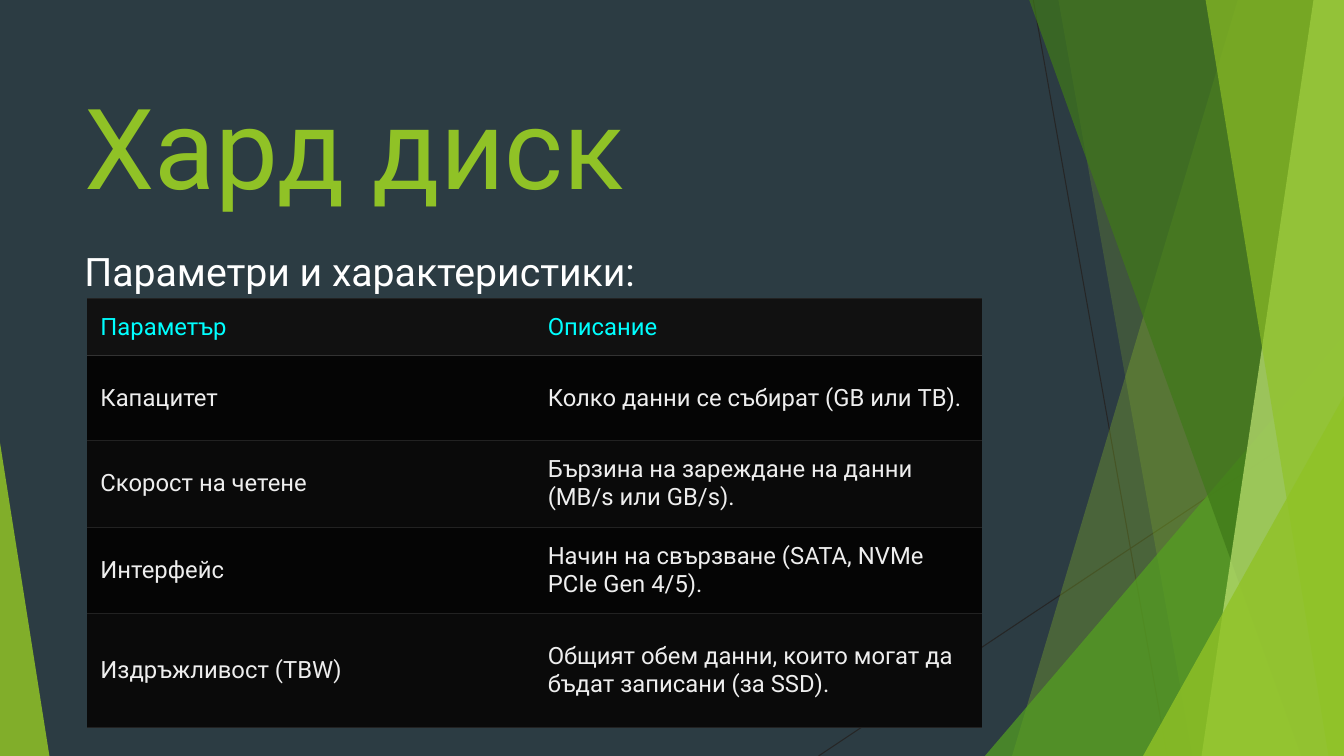
from dataclasses import dataclass

from lxml.etree import SubElement
from pptx import Presentation
from pptx.dml.color import RGBColor
from pptx.enum.shapes import MSO_CONNECTOR, MSO_SHAPE
from pptx.enum.text import MSO_ANCHOR
from pptx.oxml import parse_xml
from pptx.oxml.ns import nsdecls, qn
from pptx.util import Inches, Pt

SLIDE_W, SLIDE_H = Inches(13.33), Inches(7.5)


@dataclass(frozen=True)
class Theme:
    font: str = "Roboto"
    background: str = "2C3C43"
    lime: str = "90C226"
    pale_lime: str = "C0E474"
    green: str = "54A021"
    dark_green: str = "3F7819"
    hairline: str = "262626"
    white: str = "FFFFFF"
    header_text: str = "00FFFF"
    cell_text: str = "EEEEEE"
    header_fill: str = "111111"
    row_fills: tuple = ("050505", "0A0A0A")
    header_rule: str = "333333"
    row_rule: str = "222222"
    title_size: int = 80
    subtitle_size: int = 28
    table_size: int = 17


THEME = Theme()

LINES = [(76.88, 0, 86.85, 100), (100, 53.73, 60.9, 100)]

# Left edge at the top and at the bottom, colour, opacity
BACK_RIBBONS = [
    (92.1, 75.3, THEME.lime, 30),
    (78.75, 88.73, THEME.lime, 20),
]
FRONT_RIBBONS = [
    (76.58, 96.83, THEME.dark_green, 70),
    (97.73, 89.4, THEME.pale_lime, 70),
    (89.7, 98.85, THEME.lime, 65),
]

ROWS = [
    ("Параметър", "Описание"),
    ("Капацитет", "Колко данни се събират (GB или TB)."),
    ("Скорост на четене", "Бързина на зареждане на данни (MB/s или GB/s)."),
    ("Интерфейс", "Начин на свързване (SATA, NVMe PCIe Gen 4/5)."),
    ("Издръжливост (TBW)",
     "Общият обем данни, които могат да бъдат записани (за SSD)."),
]
ROW_HEIGHTS = (7.5, 11.3, 11.4, 11.4, 15.1)


def px(share):
    """Percent of the slide width."""
    return round(SLIDE_W * share / 100)


def py(share):
    """Percent of the slide height."""
    return round(SLIDE_H * share / 100)


def rgb(color):
    return RGBColor.from_string(color)


def paint(sp, color, opacity):
    sp.shadow.inherit = False
    sp.line.fill.background()
    sp.fill.solid()
    sp.fill.fore_color.rgb = rgb(color)
    srgb = sp._element.spPr.find(".//" + qn("a:srgbClr"))
    SubElement(srgb, qn("a:alpha"), val=str(opacity * 1000))


def add_hairline(slide, x1, y1, x2, y2):
    line = slide.shapes.add_connector(
        MSO_CONNECTOR.STRAIGHT, px(x1), py(y1), px(x2), py(y2))
    line.line.color.rgb = rgb(THEME.hairline)
    line.line.width = Pt(0.75)
    SubElement(line._element.spPr, qn("a:effectLst"))


def add_ribbon(slide, top_left, bottom_left, color, opacity):
    """Full-height band from a slanted left edge to the slide's right edge."""
    builder = slide.shapes.build_freeform(px(top_left), 0, scale=1)
    builder.add_line_segments([
        (px(100), 0), (px(100), py(100)), (px(bottom_left), py(100))])
    paint(builder.convert_to_shape(), color, opacity)


def add_corner(slide, left, right, top, apex, color, opacity):
    """Triangle on the bottom edge; apex is 0 for left and 1 for right."""
    sp = slide.shapes.add_shape(
        MSO_SHAPE.ISOSCELES_TRIANGLE,
        px(left), py(top), px(right - left), py(100 - top))
    sp.adjustments[0] = apex
    paint(sp, color, opacity)


def style(p, size, color):
    p.font.name = THEME.font
    p.font.size = Pt(size)
    p.font.bold = False
    p.font.color.rgb = rgb(color)


def add_text(slide, text, top, height, size, color, anchor):
    box = slide.shapes.add_textbox(px(5.55), py(top), px(70.5), py(height))
    tf = box.text_frame
    tf.word_wrap = True
    tf.vertical_anchor = anchor
    tf.margin_top, tf.margin_bottom = Inches(0.09), Inches(0.01)
    p = tf.paragraphs[0]
    p.text = text
    style(p, size, color)


def set_borders(cell, top, bottom):
    """Rules above and below as (colour, points); none at the sides."""
    tcPr = cell._tc.get_or_add_tcPr()
    sides = [("lnL", None), ("lnR", None), ("lnT", top), ("lnB", bottom)]
    for i, (tag, rule) in enumerate(sides):
        if rule:
            color, width = rule
            ink = f'<a:solidFill><a:srgbClr val="{color}"/></a:solidFill>'
        else:
            width, ink = 0, "<a:noFill/>"
        tcPr.insert(i, parse_xml(
            f'<a:{tag} {nsdecls("a")} w="{Pt(width)}">{ink}</a:{tag}>'))


def fill_cell(cell, text, fill, color):
    cell.fill.solid()
    cell.fill.fore_color.rgb = rgb(fill)
    cell.vertical_anchor = MSO_ANCHOR.MIDDLE
    cell.margin_left = cell.margin_right = Inches(0.13)
    cell.margin_top = cell.margin_bottom = Inches(0.13)
    p = cell.text_frame.paragraphs[0]
    p.text = text
    style(p, THEME.table_size, color)


def add_parameter_table(slide):
    col_w = 33.28
    table = slide.shapes.add_table(
        len(ROWS), 2, px(6.5), py(39.5),
        px(2 * col_w), py(sum(ROW_HEIGHTS))).table
    table.first_row = table.horz_banding = False
    for col in table.columns:
        col.width = px(col_w)
    thin, strong = (THEME.row_rule, 0.5), (THEME.header_rule, 1)
    for i, (texts, height) in enumerate(zip(ROWS, ROW_HEIGHTS)):
        table.rows[i].height = py(height)
        fill = THEME.row_fills[(i - 1) % 2] if i else THEME.header_fill
        color = THEME.cell_text if i else THEME.header_text
        for j, text in enumerate(texts):
            cell = table.cell(i, j)
            fill_cell(cell, text, fill, color)
            set_borders(cell, strong if i == 1 else thin,
                        thin if i else strong)


def main():
    prs = Presentation()
    prs.slide_width, prs.slide_height = SLIDE_W, SLIDE_H
    slide = prs.slides.add_slide(prs.slide_layouts[6])
    slide.background.fill.solid()
    slide.background.fill.fore_color.rgb = rgb(THEME.background)

    for ends in LINES:
        add_hairline(slide, *ends)
    for ribbon in BACK_RIBBONS:
        add_ribbon(slide, *ribbon)
    add_corner(slide, 73.28, 100, 44.4, 1, THEME.green, 72)
    for ribbon in FRONT_RIBBONS:
        add_ribbon(slide, *ribbon)
    add_corner(slide, 85.05, 100, 52.4, 1, THEME.lime, 80)
    add_corner(slide, 0, 3.68, 58.53, 0, THEME.lime, 85)

    add_text(slide, "Хард диск", 8.93, 19.2,
             THEME.title_size, THEME.lime, MSO_ANCHOR.BOTTOM)
    add_text(slide, "Параметри и характеристики:", 31.47, 56.53,
             THEME.subtitle_size, THEME.white, MSO_ANCHOR.TOP)
    add_parameter_table(slide)
    prs.save("out.pptx")


if __name__ == "__main__":
    main()
